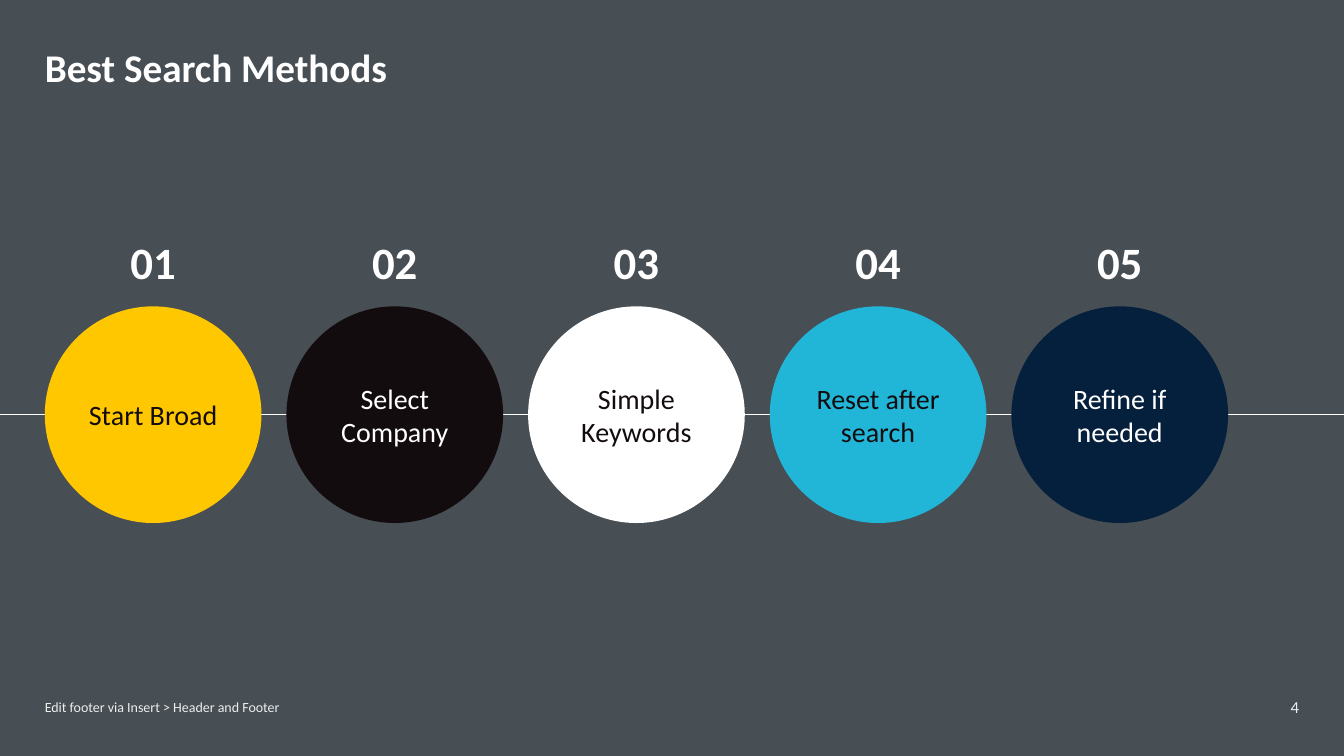
from lxml import etree
from pptx import Presentation
from pptx.dml.color import RGBColor
from pptx.enum.shapes import MSO_CONNECTOR, MSO_SHAPE
from pptx.enum.text import MSO_ANCHOR, MSO_AUTO_SIZE, PP_ALIGN
from pptx.oxml.ns import qn
from pptx.util import Cm, Pt

LEFT, CENTER, RIGHT = PP_ALIGN.LEFT, PP_ALIGN.CENTER, PP_ALIGN.RIGHT
TOP, MIDDLE = MSO_ANCHOR.TOP, MSO_ANCHOR.MIDDLE
OVAL, STRAIGHT = MSO_SHAPE.OVAL, MSO_CONNECTOR.STRAIGHT
NO_FIT, GROW = MSO_AUTO_SIZE.NONE, MSO_AUTO_SIZE.SHAPE_TO_FIT_TEXT

SLATE = RGBColor(0x47, 0x4E, 0x54)
WHITE = RGBColor(0xFF, 0xFF, 0xFF)
PALE = RGBColor(0xED, 0xED, 0xEE)
BLACK = RGBColor(0x13, 0x0C, 0x0E)
GOLD = RGBColor(0xFF, 0xC7, 0x00)
CYAN = RGBColor(0x21, 0xB6, 0xD7)
NAVY = RGBColor(0x05, 0x20, 0x3D)

WIDTH, HEIGHT = 33.87, 19.05
STEPS = [
    ("Start Broad", GOLD, BLACK),
    ("Select Company", BLACK, WHITE),
    ("Simple Keywords", WHITE, BLACK),
    ("Reset after search", CYAN, BLACK),
    ("Refine if needed", NAVY, WHITE),
]


class Deck:
    font = "Calibri"

    def __init__(self):
        self.prs = Presentation()
        self.prs.slide_width, self.prs.slide_height = Cm(WIDTH), Cm(HEIGHT)
        self.slide = self.prs.slides.add_slide(self.prs.slide_layouts[5])
        fill = self.slide.background.fill
        fill.solid()
        fill.fore_color.rgb = SLATE

    def set_text(self, shape, text, size, color, bold=False, align=LEFT,
                 anchor=TOP, inset=0.0, wrap=True, fit=NO_FIT):
        frame = shape.text_frame
        frame.text = text
        frame.word_wrap, frame.auto_size = wrap, fit
        frame.vertical_anchor = anchor
        frame.margin_left = frame.margin_right = Cm(inset)
        frame.margin_top = frame.margin_bottom = Cm(inset)
        para = frame.paragraphs[0]
        para.alignment = align
        font = para.runs[0].font
        font.name, font.size, font.bold = self.font, Pt(size), bold
        font.color.rgb = color
        return para

    def title(self, text, x, y, w, h):
        shape = self.slide.shapes.title
        shape.left, shape.top = Cm(x), Cm(y)
        shape.width, shape.height = Cm(w), Cm(h)
        self.set_text(shape, text, 28, WHITE, bold=True).line_spacing = 0.9

    def label(self, text, x, y, w, h, size, color, **style):
        box = self.slide.shapes.add_textbox(Cm(x), Cm(y), Cm(w), Cm(h))
        self.set_text(box, text, size, color, **style)

    def line(self, x1, y1, x2, y2):
        line = self.slide.shapes.add_connector(
            STRAIGHT, Cm(x1), Cm(y1), Cm(x2), Cm(y2))
        line.line.color.rgb, line.line.width = WHITE, Pt(1)
        etree.SubElement(line._element.spPr, qn("a:effectLst"))

    def disc(self, text, x, y, size, fill, color):
        disc = self.slide.shapes.add_shape(
            OVAL, Cm(x), Cm(y), Cm(size), Cm(size))
        disc.shadow.inherit = False
        disc.fill.solid()
        disc.fill.fore_color.rgb = fill
        disc.line.fill.background()
        self.set_text(disc, text, 20, color, align=CENTER, anchor=MIDDLE,
                      inset=0.2)


def main():
    deck = Deck()
    edge, top, size, pitch = 1.13, 7.72, 5.46, 6.09

    # Title
    deck.title("Best Search Methods", edge, 1.22, 29.85, 2.03)

    # Footer and page number
    deck.label("Edit footer via Insert > Header and Footer",
               edge, 17.63, 11.63, 0.38, 10, PALE, anchor=MIDDLE)
    deck.label("4", 30.63, 17.63, 2.11, 0.38, 12, PALE,
               align=RIGHT, anchor=MIDDLE)

    # Line behind the circles
    mid = top + size / 2
    deck.line(0, mid, WIDTH, mid)

    # Numbered steps
    wide = 1.17
    for i, (text, fill, color) in enumerate(STEPS):
        x = edge + i * pitch
        deck.disc(text, x, top, size, fill, color)
        deck.label(f"{i + 1:02}", x + (size - wide) / 2, 5.92, wide, 1.37,
                   32, WHITE, bold=True, align=CENTER, wrap=False, fit=GROW)

    deck.prs.save("out.pptx")


if __name__ == "__main__":
    main()
